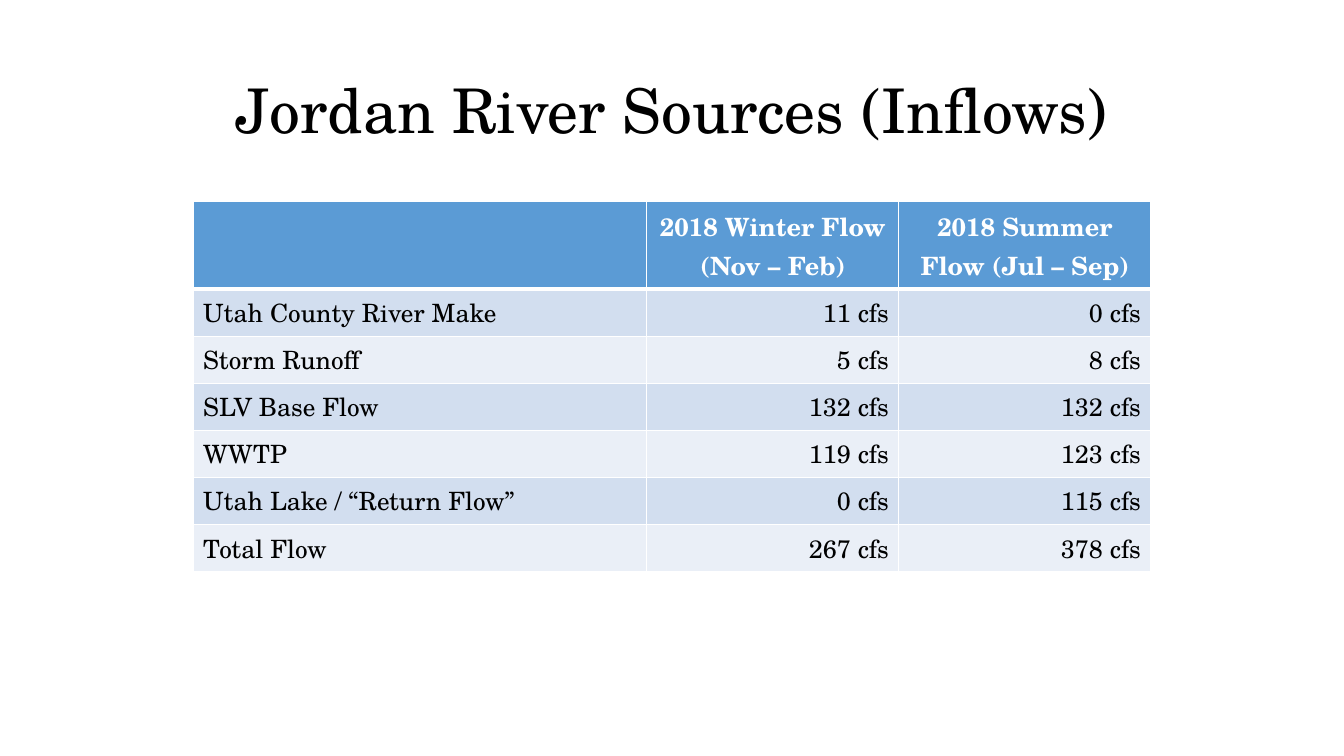
from lxml import etree
from pptx import Presentation
from pptx.dml.color import RGBColor
from pptx.enum.text import MSO_ANCHOR, PP_ALIGN
from pptx.oxml.ns import qn
from pptx.util import Inches, Pt

LEFT, CENTER, RIGHT = PP_ALIGN.LEFT, PP_ALIGN.CENTER, PP_ALIGN.RIGHT
MIDDLE = MSO_ANCHOR.MIDDLE
BLACK = RGBColor(0x00, 0x00, 0x00)
WHITE = RGBColor(0xFF, 0xFF, 0xFF)
BLUE = RGBColor(0x5B, 0x9B, 0xD5)
BANDS = (RGBColor(0xD2, 0xDE, 0xEF), RGBColor(0xEA, 0xEF, 0xF7))
FACE = "TeX Gyre Schola"

HEADING = "Jordan River Sources (Inflows)"
SEASONS = ("", "2018 Winter Flow (Nov – Feb)", "2018 Summer Flow (Jul – Sep)")
INFLOWS = [
    ("Utah County River Make", 11, 0),
    ("Storm Runoff", 5, 8),
    ("SLV Base Flow", 132, 132),
    ("WWTP", 119, 123),
    ("Utah Lake / “Return Flow”", 0, 115),
    ("Total Flow", 267, 378),
]
SLIDE_WIDTH = 13.33
HEADING_WIDTH = 11.5
COLUMN_WIDTHS = (4.5, 2.5, 2.5)
FLOWS_WIDTH = sum(COLUMN_WIDTHS)
FLOWS_HEIGHT = 3.67
SEASON_HEIGHT = 0.87
INFLOW_HEIGHT = (FLOWS_HEIGHT - SEASON_HEIGHT) / len(INFLOWS)

HEADING_FONT = {"name": FACE, "size": Pt(44), "bold": False}
SEASON_FONT = {"name": FACE, "size": Pt(18), "bold": True}
INFLOW_FONT = {"name": FACE, "size": Pt(18), "bold": False}


def centered(width):
    return Inches((SLIDE_WIDTH - width) / 2)


def write(paragraph, words, font_format, color, alignment):
    paragraph.alignment = alignment
    run = paragraph.add_run()
    run.text = words
    for attribute, value in font_format.items():
        setattr(run.font, attribute, value)
    run.font.color.rgb = color


def draw_border(cell, side, points):
    line = etree.Element(qn(f"a:{side}"), w=str(Pt(points)))
    fill = etree.SubElement(line, qn("a:solidFill"))
    etree.SubElement(fill, qn("a:srgbClr"), val=str(WHITE))
    return line


def fill_cell(cell, words, fill, font_format, color, alignment, top=1, bottom=1):
    cell.fill.solid()
    cell.fill.fore_color.rgb = fill
    widths = {"lnL": 1, "lnR": 1, "lnT": top, "lnB": bottom}
    properties = cell._tc.get_or_add_tcPr()
    for position, (side, points) in enumerate(widths.items()):
        properties.insert(position, draw_border(cell, side, points))
    if words:
        write(cell.text_frame.paragraphs[0], words, font_format, color, alignment)


def add_heading(slide):
    box = slide.shapes.add_textbox(
        centered(HEADING_WIDTH), Inches(0.4), Inches(HEADING_WIDTH), Inches(1.45)
    )
    frame = box.text_frame
    frame.word_wrap = True
    frame.vertical_anchor = MIDDLE
    line = frame.paragraphs[0]
    write(line, HEADING, HEADING_FONT, BLACK, CENTER)
    line.line_spacing = 0.9


def add_flows(slide):
    flows = slide.shapes.add_table(
        len(INFLOWS) + 1, len(SEASONS),
        centered(FLOWS_WIDTH), Inches(2), Inches(FLOWS_WIDTH), Inches(FLOWS_HEIGHT),
    ).table
    for column, width in zip(flows.columns, COLUMN_WIDTHS):
        column.width = Inches(width)
    for r, row in enumerate(flows.rows):
        row.height = Inches(INFLOW_HEIGHT if r else SEASON_HEIGHT)

    for c, season in enumerate(SEASONS):
        fill_cell(flows.cell(0, c), season, BLUE, SEASON_FONT, WHITE, CENTER, bottom=3)
    for r, (inflow, *rates) in enumerate(INFLOWS):
        entries = [inflow] + [f"{rate} cfs" for rate in rates]
        for c, entry in enumerate(entries):
            fill_cell(
                flows.cell(r + 1, c), entry, BANDS[r % 2], INFLOW_FONT, BLACK,
                RIGHT if c else LEFT, top=1 if r else 3,
            )


def main():
    deck = Presentation()
    deck.slide_width = Inches(SLIDE_WIDTH)
    deck.slide_height = Inches(7.5)
    slide = deck.slides.add_slide(deck.slide_layouts[6])
    add_heading(slide)
    add_flows(slide)
    deck.save("out.pptx")


if __name__ == "__main__":
    main()
